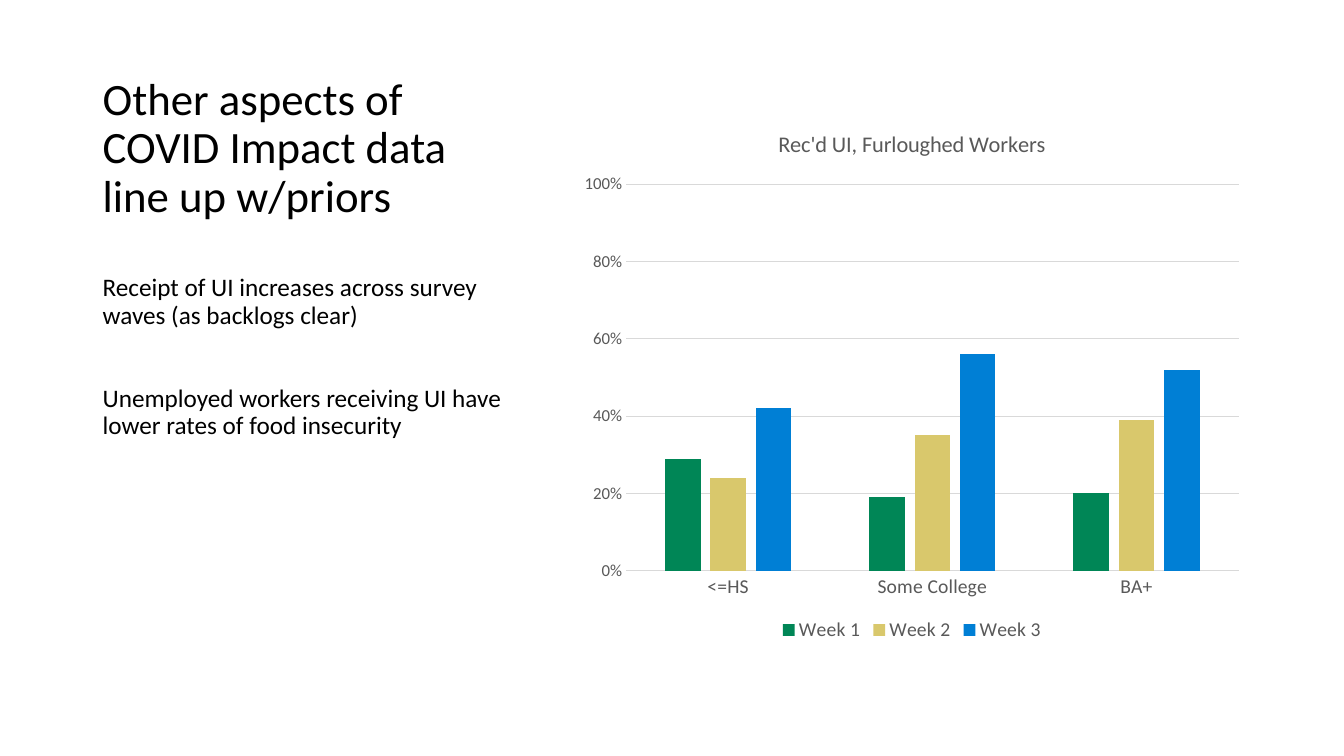
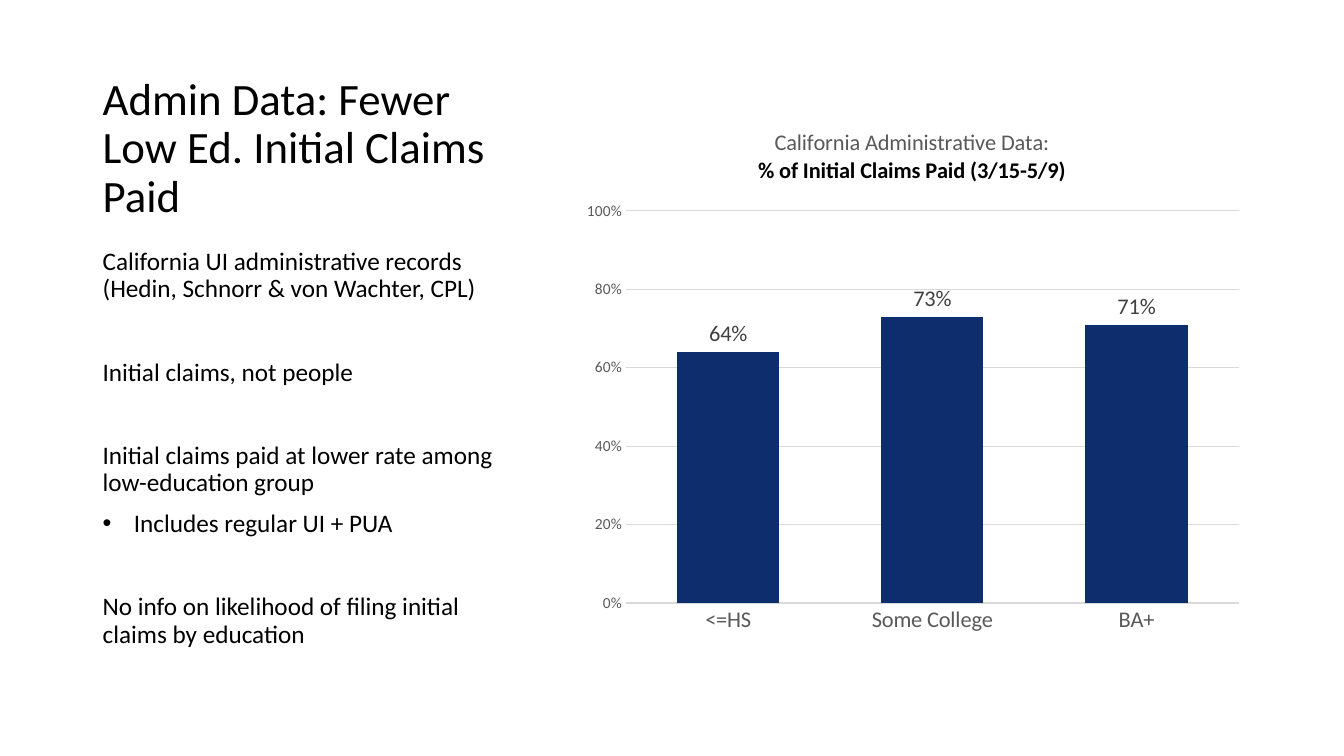
from dataclasses import dataclass

from lxml.etree import SubElement
from pptx import Presentation
from pptx.chart.chart import Chart
from pptx.chart.data import CategoryChartData
from pptx.dml.color import RGBColor
from pptx.enum.chart import XL_CHART_TYPE, XL_LABEL_POSITION, XL_LEGEND_POSITION, XL_TICK_MARK
from pptx.enum.text import MSO_ANCHOR
from pptx.oxml import parse_xml
from pptx.oxml.ns import nsdecls, qn
from pptx.slide import Slide
from pptx.text.text import Font, TextFrame
from pptx.util import Inches, Pt

FACE = "Calibri"
BLACK, GRAY, DARK, RULE = "000000", "595959", "404040", "D9D9D9"
GROUPS = ["<=HS", "Some College", "BA+"]


@dataclass
class Line:
    text: str
    space: float = 40
    dot: bool = False


@dataclass
class Head:
    text: str
    color: str = GRAY
    bold: bool = False


@dataclass
class Bar:
    name: str
    color: str
    vals: list[float]


@dataclass
class Plot:
    heads: list[Head]
    bars: list[Bar]
    gap: int
    cat_size: int
    val_size: int
    frame: tuple[float, float, float, float]
    labels: bool = False


@dataclass
class Page:
    title: str
    top: float
    lines: list[Line]
    plot: Plot


PAGES = [
    Page(
        "Other aspects of COVID Impact data line up w/priors",
        2.68,
        [
            Line("Receipt of UI increases across survey waves (as backlogs clear)", 0),
            Line("Unemployed workers receiving UI have lower rates of food insecurity"),
        ],
        Plot(
            [Head("Rec'd UI, Furloughed Workers")],
            [
                Bar("Week 1", "008656", [0.29, 0.19, 0.2]),
                Bar("Week 2", "D9C86C", [0.24, 0.35, 0.39]),
                Bar("Week 3", "007FD5", [0.42, 0.56, 0.52]),
            ],
            219, 14, 12, (0.08, 0.14, 0.9, 0.72),
        ),
    ),
    Page(
        "Admin Data: Fewer Low Ed. Initial Claims Paid",
        2.42,
        [
            Line("California UI administrative records (Hedin, Schnorr & von Wachter, CPL)", 0),
            Line("Initial claims, not people"),
            Line("Initial claims paid at lower rate among low-education group"),
            Line("Includes regular UI + PUA", 10, True),
            Line("No info on likelihood of filing initial claims by education"),
        ],
        Plot(
            [
                Head("California Administrative Data:"),
                Head("% of Initial Claims Paid (3/15-5/9)", BLACK, True),
            ],
            [Bar("Series 1", "0D2D6C", [0.64, 0.73, 0.71])],
            100, 16, 11, (0.08, 0.19, 0.9, 0.73), True,
        ),
    ),
]


def paint(color: str) -> RGBColor:
    return RGBColor.from_string(color)


def style(font: Font, size: float, color: str, bold: bool = False) -> None:
    font.name = FACE
    font.size = Pt(size)
    font.bold = bold
    font.color.rgb = paint(color)


def write(slide: Slide, top: float, height: float, size: float, lines: list[Line]) -> TextFrame:
    box = slide.shapes.add_textbox(Inches(0.92), Inches(top), Inches(4.3), Inches(height))
    frame = box.text_frame
    frame.word_wrap = True
    for i, line in enumerate(lines):
        para = frame.add_paragraph() if i else frame.paragraphs[0]
        para.line_spacing = 0.9
        para.space_before = Pt(line.space)
        run = para.add_run()
        run.text = line.text
        style(run.font, size, BLACK)
        if line.dot:
            props = para._p.get_or_add_pPr()
            props.set("marL", str(Inches(0.31)))
            props.set("indent", str(-Inches(0.31)))
            SubElement(props, qn("a:buFont"), typeface="Arial")
            SubElement(props, qn("a:buChar"), char="•")
    return frame


def name_chart(chart: Chart, heads: list[Head]) -> None:
    chart.has_title = True
    frame = chart.chart_title.text_frame
    for i, head in enumerate(heads):
        para = frame.add_paragraph() if i else frame.paragraphs[0]
        run = para.add_run()
        run.text = head.text
        style(run.font, 16, head.color, head.bold)
    chart.chart_title.include_in_layout = False


def set_axes(chart: Chart, plot: Plot) -> None:
    cat, val = chart.category_axis, chart.value_axis
    for axis, size in ((cat, plot.cat_size), (val, plot.val_size)):
        axis.major_tick_mark = axis.minor_tick_mark = XL_TICK_MARK.NONE
        style(axis.tick_labels.font, size, GRAY)
    val.minimum_scale, val.maximum_scale, val.major_unit = 0, 1, 0.2
    val.tick_labels.number_format = "0%"
    val.tick_labels.number_format_is_linked = False
    val.has_major_gridlines = True
    val.format.line.fill.background()
    for rule in (cat.format.line, val.major_gridlines.format.line):
        rule.color.rgb = paint(RULE)
        rule.width = Pt(0.75)


def place_plot(chart: Chart, frame: tuple[float, float, float, float]) -> None:
    area = chart.plots[0]._element.getparent()
    for old in area.findall(qn("c:layout")):
        area.remove(old)
    sides = "".join(f'<c:{key} val="{num}"/>' for key, num in zip("xywh", frame))
    area.insert(0, parse_xml(
        f'<c:layout {nsdecls("c")}><c:manualLayout><c:layoutTarget val="inner"/>'
        f'<c:xMode val="edge"/><c:yMode val="edge"/>{sides}</c:manualLayout></c:layout>'
    ))


def draw_chart(slide: Slide, plot: Plot) -> None:
    data = CategoryChartData(number_format="0%")
    data.categories = GROUPS
    for bar in plot.bars:
        data.add_series(bar.name, bar.vals)
    chart = slide.shapes.add_chart(
        XL_CHART_TYPE.COLUMN_CLUSTERED,
        Inches(5.67), Inches(1.08), Inches(6.75), Inches(5.33), data,
    ).chart
    style(chart.font, 10, BLACK)
    name_chart(chart, plot.heads)
    set_axes(chart, plot)
    place_plot(chart, plot.frame)
    group = chart.plots[0]
    group.gap_width, group.overlap = plot.gap, -27
    group.vary_by_categories = False
    for bar, row in zip(plot.bars, group.series):
        row.format.fill.solid()
        row.format.fill.fore_color.rgb = paint(bar.color)
        if plot.labels:
            labels = row.data_labels
            labels.show_value = True
            labels.position = XL_LABEL_POSITION.OUTSIDE_END
            labels.number_format = "0%"
            labels.number_format_is_linked = False
            style(labels.font, 16, DARK)
    chart.has_legend = len(plot.bars) > 1
    if chart.has_legend:
        chart.legend.position = XL_LEGEND_POSITION.BOTTOM
        chart.legend.include_in_layout = False
        style(chart.legend.font, 14, GRAY)


def main() -> None:
    deck = Presentation()
    deck.slide_width, deck.slide_height = Inches(13.33), Inches(7.5)
    for page in PAGES:
        slide = deck.slides.add_slide(deck.slide_layouts[6])
        title = write(slide, 0.5, 1.75, 32, [Line(page.title, 0)])
        title.vertical_anchor = MSO_ANCHOR.BOTTOM
        write(slide, page.top, 4.17, 18, page.lines)
        draw_chart(slide, page.plot)
    deck.save("out.pptx")


if __name__ == "__main__":
    main()
